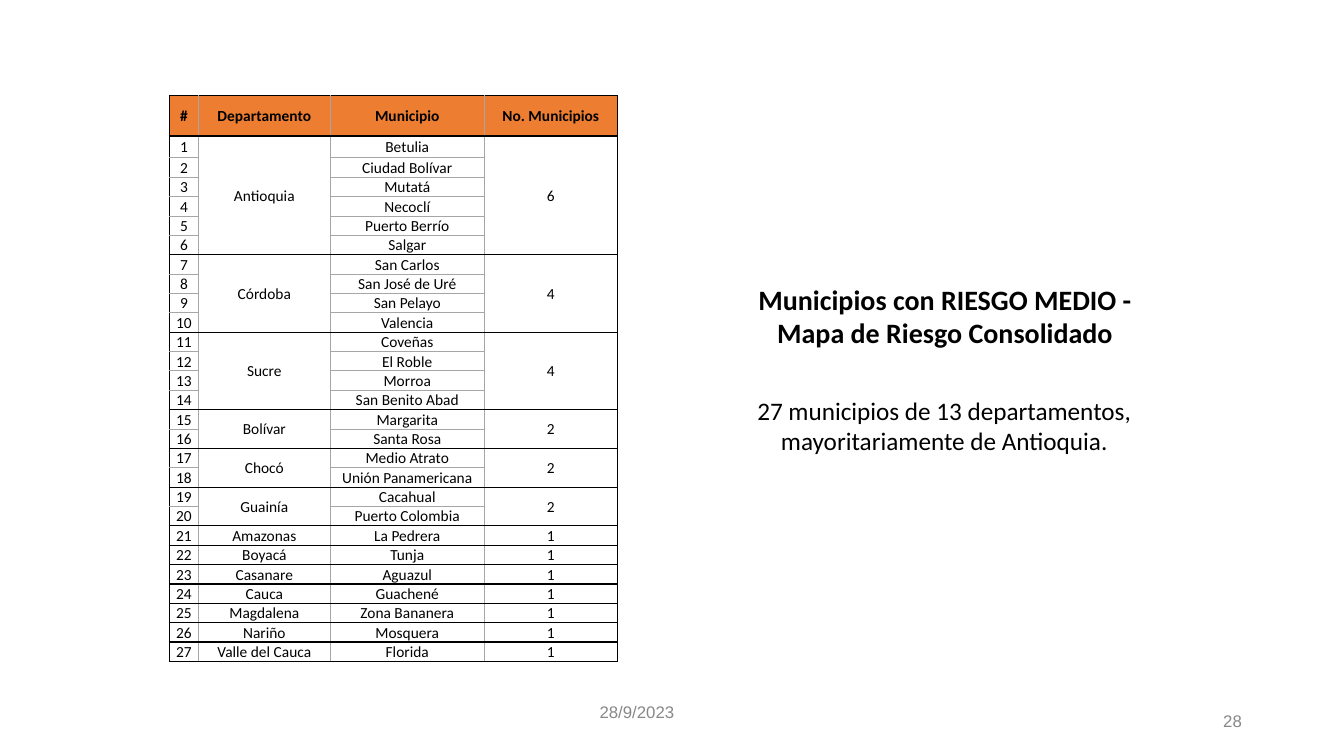
import pptx
import pptx.dml.color
import pptx.enum.text
import pptx.util
from pptx.oxml.ns import qn
from lxml import etree

Pt = pptx.util.Pt
RGBColor = pptx.dml.color.RGBColor
ALIGN = pptx.enum.text.PP_ALIGN
ANCHOR = pptx.enum.text.MSO_ANCHOR
AUTO_SIZE = pptx.enum.text.MSO_AUTO_SIZE

BLACK = RGBColor(0x00, 0x00, 0x00)
GRAY = RGBColor(0xA6, 0xA6, 0xA6)
FOOTER_GRAY = RGBColor(0x88, 0x88, 0x88)
ORANGE = RGBColor(0xED, 0x7D, 0x31)

OUTER_LINE = (BLACK, 1)
INNER_LINE = (GRAY, 0.75)

HEADINGS = ["#", "Departamento", "Municipio", "No. Municipios"]
COLUMN_WIDTHS = [20.8, 94.1, 110.1, 95]
HEADER_HEIGHT, FIRST_HEIGHT, ROW_HEIGHT = 28.8, 15.6, 13.85

MUNICIPALITIES = {
    "Antioquia": ["Betulia", "Ciudad Bolívar", "Mutatá", "Necoclí", "Puerto Berrío", "Salgar"],
    "Córdoba": ["San Carlos", "San José de Uré", "San Pelayo", "Valencia"],
    "Sucre": ["Coveñas", "El Roble", "Morroa", "San Benito Abad"],
    "Bolívar": ["Margarita", "Santa Rosa"],
    "Chocó": ["Medio Atrato", "Unión Panamericana"],
    "Guainía": ["Cacahual", "Puerto Colombia"],
    "Amazonas": ["La Pedrera"],
    "Boyacá": ["Tunja"],
    "Casanare": ["Aguazul"],
    "Cauca": ["Guachené"],
    "Magdalena": ["Zona Bananera"],
    "Nariño": ["Mosquera"],
    "Valle del Cauca": ["Florida"],
}

CELL_FORMAT = {
    "margin_left": Pt(0.5),
    "margin_right": Pt(0.5),
    "margin_top": Pt(0.5),
    "margin_bottom": Pt(0),
    "vertical_anchor": ANCHOR.MIDDLE,
}
TABLE_FONT = {"name": "Calibri", "size": Pt(11), "bold": False}
TITLE_FONT = {"name": "Calibri", "size": Pt(20), "bold": True}
SUMMARY_FONT = {"name": "Calibri", "size": Pt(18)}
FOOTER_FONT = {"name": "Arial", "size": Pt(12)}
GROWING_FRAME = {"word_wrap": True, "auto_size": AUTO_SIZE.SHAPE_TO_FIT_TEXT}
FOOTER_FRAME = {"word_wrap": True, "vertical_anchor": ANCHOR.MIDDLE}


def apply_format(target, values):
    for name, value in values.items():
        setattr(target, name, value)


def write_text(text_frame, text, font, color=BLACK, alignment=ALIGN.CENTER):
    paragraph = text_frame.paragraphs[0]
    paragraph.alignment = alignment
    run = paragraph.add_run()
    run.text = text
    apply_format(run.font, font)
    run.font.color.rgb = color


def add_text(slide, bounds, text, font, frame, **style):
    box = slide.shapes.add_textbox(*map(Pt, bounds))
    apply_format(box.text_frame, frame)
    write_text(box.text_frame, text, font, **style)


def set_borders(cell, column, black_top, black_bottom):
    is_outer = {
        "L": column == 0,
        "R": column == len(HEADINGS) - 1,
        "T": black_top,
        "B": black_bottom,
    }
    properties = cell._tc.get_or_add_tcPr()
    for side, outer in is_outer.items():
        color, width = OUTER_LINE if outer else INNER_LINE
        line = etree.SubElement(properties, qn(f"a:ln{side}"), w=str(Pt(width)))
        fill = etree.SubElement(line, qn("a:solidFill"))
        etree.SubElement(fill, qn("a:srgbClr"), val=str(color))


def format_cell(cell, column, black_top=True, black_bottom=True, color=None):
    apply_format(cell, CELL_FORMAT)
    set_borders(cell, column, black_top, black_bottom)
    if color is None:
        cell.fill.background()
    else:
        cell.fill.solid()
        cell.fill.fore_color.rgb = color


def add_department(table, first, department, towns):
    last = first + len(towns) - 1
    for row, town in enumerate(towns, first):
        for column in range(len(HEADINGS)):
            merged = column in (1, 3)
            format_cell(table.cell(row, column), column,
                        merged or row == first, merged or row == last)
        for column, text in ((0, str(row)), (2, town)):
            write_text(table.cell(row, column).text_frame, text, TABLE_FONT)
    for column, text in ((1, department), (3, str(len(towns)))):
        origin = table.cell(first, column)
        if last > first:
            origin.merge(table.cell(last, column))
        write_text(origin.text_frame, text, TABLE_FONT)
    return last + 1


def add_municipality_table(slide, left, top):
    count = sum(map(len, MUNICIPALITIES.values()))
    heights = [HEADER_HEIGHT, FIRST_HEIGHT] + [ROW_HEIGHT] * (count - 1)
    table = slide.shapes.add_table(
        len(heights), len(HEADINGS), Pt(left), Pt(top),
        Pt(sum(COLUMN_WIDTHS)), Pt(sum(heights))).table
    table.horz_banding = False
    table.first_row = False
    for column, width in zip(table.columns, COLUMN_WIDTHS):
        column.width = Pt(width)
    for row, height in zip(table.rows, heights):
        row.height = Pt(height)

    # Header row
    for column, heading in enumerate(HEADINGS):
        cell = table.cell(0, column)
        format_cell(cell, column, color=ORANGE)
        write_text(cell.text_frame, heading, {**TABLE_FONT, "bold": True})

    # One block of rows per department
    row = 1
    for department, towns in MUNICIPALITIES.items():
        row = add_department(table, row, department, towns)


def main():
    presentation = pptx.Presentation()
    presentation.slide_width, presentation.slide_height = Pt(960), Pt(540)
    slide = presentation.slides.add_slide(presentation.slide_layouts[6])

    # Page number
    add_text(slide, (678.2, 500.4, 216, 28.8), "28", FOOTER_FONT, FOOTER_FRAME,
             color=FOOTER_GRAY, alignment=ALIGN.RIGHT)

    # Message on the right
    add_text(slide, (532, 278.6, 285, 51), "27 municipios de 13 departamentos, "
             "mayoritariamente de Antioquia.", SUMMARY_FONT, GROWING_FRAME)
    add_text(slide, (514.8, 198, 320.4, 55.4), "Municipios con RIESGO MEDIO - "
             "Mapa de Riesgo Consolidado", TITLE_FONT, GROWING_FRAME)

    # Table on the left
    add_municipality_table(slide, 121, 68.4)

    # Date
    add_text(slide, (347, 494, 216, 28.8), "28/9/2023", FOOTER_FONT, FOOTER_FRAME,
             color=FOOTER_GRAY)

    presentation.save("out.pptx")


if __name__ == "__main__":
    main()
